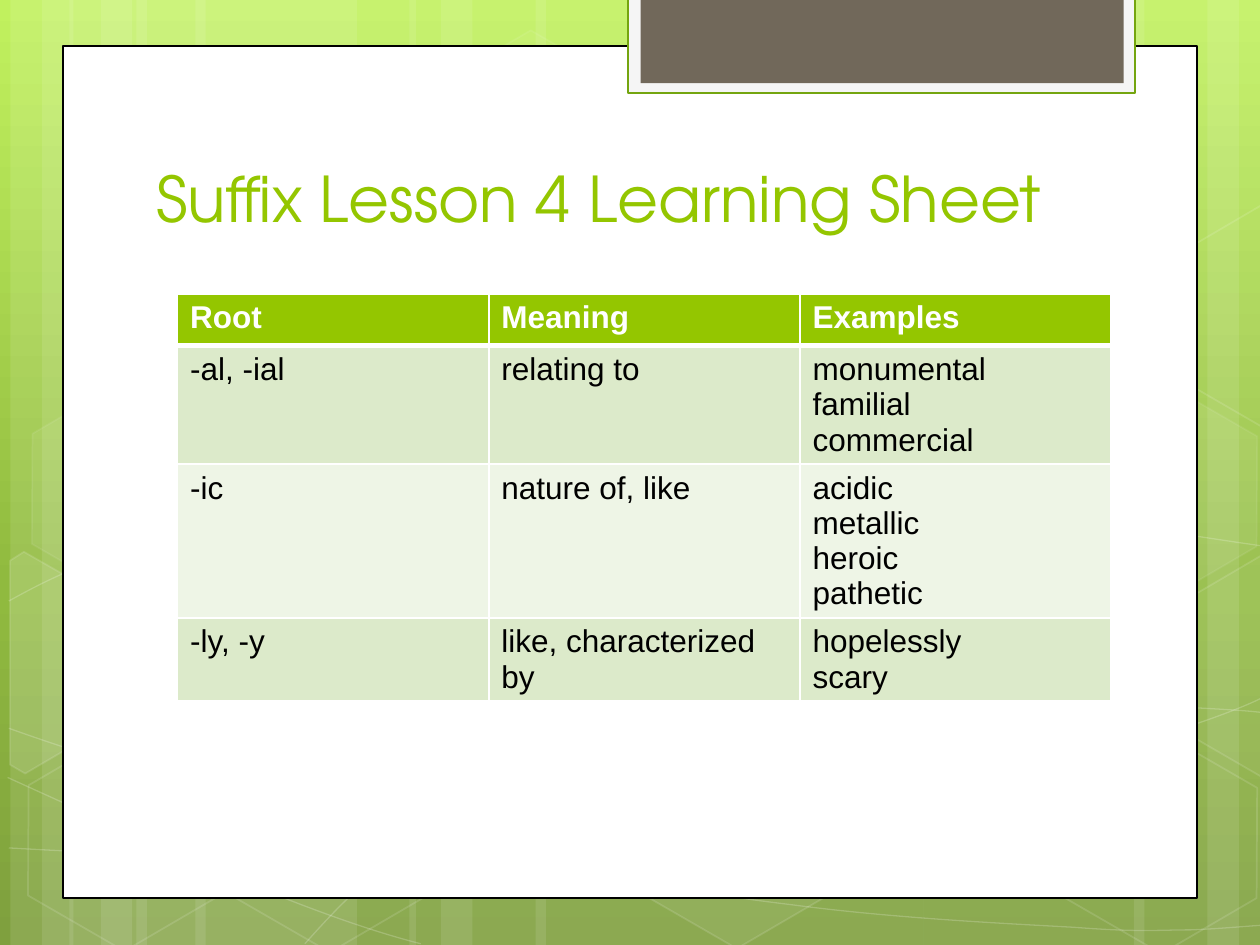
from copy import deepcopy
from dataclasses import dataclass
from typing import NamedTuple, Optional

from lxml.etree import SubElement
from pptx import Presentation
from pptx.dml.color import RGBColor as RGB
from pptx.enum.shapes import MSO_SHAPE as Shape
from pptx.enum.text import MSO_ANCHOR as Anchor, PP_ALIGN as Align
from pptx.oxml import parse_xml
from pptx.oxml.ns import nsdecls, qn
from pptx.util import Inches, Pt

COLS, ROWS = 100, 75
WIDTH, HEIGHT = Inches(10), Inches(7.5)


@dataclass(frozen=True)
class Theme:
    sky: tuple = ((0, "C1F15E"), (0.62, "90BA3F"), (1, "7FA03E"))
    white: str = "FFFFFF"
    black: str = "000000"
    accent: str = "94C600"
    tab_fill: str = "F5F5F5"
    tab_line: str = "74A50F"
    tab_core: str = "71685A"
    stripes: tuple = ("DCEACA", "EEF5E6")
    title_font: str = "TeX Gyre Adventor"
    body_font: str = "Arial"
    title_size: float = 36
    body_size: float = 18


class Box(NamedTuple):
    col: float
    row: float
    cols: float
    rows: float


class Paint(NamedTuple):
    color: str
    alpha: int = 100
    width: float = 1


class Hexagon(NamedTuple):
    col: float
    row: float
    fill: int
    line: int


class Outline(NamedTuple):
    points: list
    fill: int = 0


THEME = Theme()

BANDS = [(10.83, 17.5), (0.83, 5), (3.33, 8.33),
         (15.5, 17.5), (5.5, 5), (8, 8.33),
         (73.33, 17.5), (95.83, 5), (90, 8.33),
         (42.5, 30.83), (32.5, 5), (35, 8.33)]

CURVES = [
    [(0.7, 67.3), (6.1, 67.6), (11.5, 67.9), (19, 67.8), (26.5, 67.7), (35.8, 67.5),
     (45.8, 66.5), (55.8, 65.5), (70, 63.6), (79.2, 61.7), (88.3, 59.8), (97.7, 56.8), (100.7, 55.1)],
    [(0.7, 47.7), (3.6, 46.1), (6.5, 44.6), (12.1, 43.1), (17.8, 41.6), (25.9, 39.4),
     (34.7, 38.7), (43.6, 38), (54.4, 37.9), (65.4, 38.7), (76.4, 39.5), (94.7, 42.6), (100.7, 43.4)],
    [(0.6, 61.7), (12.7, 67.2), (24.7, 72.7), (33.4, 74.9)],
    [(0.7, 57.8), (3.8, 58.9), (7, 60), (12.8, 61.6), (18.6, 63.1), (27.3, 65.6),
     (35.7, 67.3), (44, 69), (54.5, 70.8), (62.8, 71.8), (71.1, 72.9), (80, 73.3), (85.3, 73.6),
     (90.5, 74), (91.9, 73.8), (94.5, 73.8), (97.1, 73.7), (98.9, 73.5), (100.7, 73.4)],
    [(24.2, 74.9), (26, 72.9), (27.8, 70.9), (30.2, 69.1), (32.6, 67.3), (36, 65.3),
     (38.8, 63.9), (41.6, 62.5), (43.3, 61.9), (47, 60.9), (50.6, 59.9), (57.3, 58.5), (60.8, 57.8),
     (64.4, 57.1), (64.9, 57.1), (68, 56.9), (71.1, 56.6), (76, 56.3), (79.4, 56.2),
     (82.9, 56.1), (88.6, 56.2), (88.6, 56.2), (88.6, 56.2), (95.3, 56.2), (95.3, 56.2),
     (97.1, 56.3), (98.8, 56.4), (99.7, 56.5), (100.6, 56.6), (100.3, 56.5), (100.6, 56.6)],
]

HEXAGONS = [Hexagon(33.4, 3.6, 4, 8), Hexagon(49.7, 58.9, 6, 12),
            Hexagon(1.1, 59.1, 0, 12), Hexagon(1.4, 31.2, 7, 8),
            Hexagon(17.4, 59.2, 0, 12), Hexagon(83.4, 59.3, 0, 12),
            Hexagon(83.4, 31.4, 7, 8)]

EDGE_HEXAGONS = [
    Outline([(0.8, 44.5), (1.9, 43.8), (9.6, 48.2), (9.5, 57), (2, 61.4), (0.8, 60.7)], 10),
    Outline([(92.6, 48.5), (100.1, 44.1), (100.9, 44.6), (100.9, 61.3), (100.2, 61.7), (92.6, 57.3)], 4),
    Outline([(92.6, 20.7), (100.1, 16.3), (101, 16.8), (100.9, 33.5), (100.2, 33.9), (92.6, 29.5)]),
]

LESSON = [
    ("Root", "Meaning", "Examples"),
    ("-al, -ial", "relating to", "monumental\nfamilial\ncommercial"),
    ("-ic", "nature of, like", "acidic\nmetallic\nheroic\npathetic"),
    ("-ly, -y", "like, characterized by", "hopelessly\nscary"),
]


def x(cols: float) -> int:
    return round(WIDTH * cols / COLS)


def y(rows: float) -> int:
    return round(HEIGHT * rows / ROWS)


def place(box: Box) -> tuple:
    return x(box.col), y(box.row), x(box.cols), y(box.rows)


def apply(fill, holder, paint: Optional[Paint]) -> None:
    if paint is None or not paint.alpha:
        fill.background()
        return
    fill.solid()
    fill.fore_color.rgb = RGB.from_string(paint.color)
    if paint.alpha < 100:
        color = holder.find(qn("a:solidFill")).find(qn("a:srgbClr"))
        SubElement(color, qn("a:alpha"), val=str(paint.alpha * 1000))


def style(sp, fill: Optional[Paint] = None, line: Optional[Paint] = None) -> None:
    sp.shadow.inherit = False
    props = sp.element.spPr
    apply(sp.fill, props, fill)
    if line:
        sp.line.width = Pt(line.width)
    apply(sp.line.fill, props.find(qn("a:ln")), line)


def draw_rect(s, box: Box, fill: Paint, line: Optional[Paint] = None) -> None:
    style(s.shapes.add_shape(Shape.RECTANGLE, *place(box)), fill, line)


def draw_hexagon(s, item: Hexagon) -> None:
    sp = s.shapes.add_shape(Shape.HEXAGON, *place(Box(item.col, item.row, 17.5, 15.2)))
    sp.adjustments[0] = 0.285
    sp.rotation = 30
    style(sp, Paint(THEME.white, item.fill), Paint(THEME.white, item.line))


def add_path(s, points: list, close: bool):
    start, *rest = [(x(px), y(py)) for px, py in points]
    builder = s.shapes.build_freeform(*start)
    builder.add_line_segments(rest, close=close)
    return builder.convert_to_shape()


def draw_outline(s, item: Outline) -> None:
    style(add_path(s, item.points, True), Paint(THEME.white, item.fill), Paint(THEME.white, 12))


def draw_curve(s, knots: list) -> None:
    sp = add_path(s, knots, False)
    path = next(sp.element.iter(qn("a:path")))
    segments = path.findall(qn("a:lnTo"))
    for i in range(0, len(segments), 3):
        curve = SubElement(path, qn("a:cubicBezTo"))
        for segment in segments[i:i + 3]:
            curve.append(segment.find(qn("a:pt")))
            path.remove(segment)
    style(sp, None, Paint(THEME.white, 20, 0.75))


def draw_background(s) -> None:
    fill = s.background.fill
    fill.gradient()
    fill.gradient_angle = 270
    stops = next(s.element.iter(qn("a:gsLst")))
    stops.append(deepcopy(stops[-1]))
    for stop, (position, color) in zip(fill.gradient_stops, THEME.sky):
        stop.position = position
        stop.color.rgb = RGB.from_string(color)


def format_text(tf, font: str, size: float, color: str, bold: bool = False) -> None:
    for p in tf.paragraphs:
        p.alignment = Align.LEFT
        for r in p.runs:
            r.font.name, r.font.size, r.font.bold = font, Pt(size), bold
            r.font.color.rgb = RGB.from_string(color)


def set_borders(cell, bottom: float) -> None:
    tc_pr = cell._tc.get_or_add_tcPr()
    for i, (side, width) in enumerate(zip("LRTB", (1, 1, 1, bottom))):
        tc_pr.insert(i, parse_xml(
            f'<a:ln{side} {nsdecls("a")} w="{Pt(width)}"><a:solidFill>'
            f'<a:srgbClr val="{THEME.white}"/></a:solidFill></a:ln{side}>'))


def draw_table(s, box: Box, rows: list) -> None:
    table = s.shapes.add_table(len(rows), len(rows[0]), *place(box)).table
    for i, texts in enumerate(rows):
        header = i == 0
        for j, text in enumerate(texts):
            cell = table.cell(i, j)
            cell.text = text
            cell.fill.solid()
            cell.fill.fore_color.rgb = RGB.from_string(
                THEME.accent if header else THEME.stripes[(i - 1) % 2])
            format_text(cell.text_frame, THEME.body_font, THEME.body_size,
                        THEME.white if header else THEME.black, header)
            if header:
                set_borders(cell, 3)


def draw_title(s, box: Box, text: str) -> None:
    title = s.shapes.title
    title.left, title.top, title.width, title.height = place(box)
    tf = title.text_frame
    tf.text = text
    tf.vertical_anchor = Anchor.BOTTOM
    format_text(tf, THEME.title_font, THEME.title_size, THEME.accent)
    title.element.getparent().append(title.element)


def main() -> None:
    prs = Presentation()
    prs.slide_width, prs.slide_height = WIDTH, HEIGHT
    s = prs.slides.add_slide(prs.slide_layouts[5])
    draw_background(s)
    for col, cols in BANDS:
        draw_rect(s, Box(col, 0, cols, ROWS), Paint(THEME.white, 10))
    for knots in CURVES:
        draw_curve(s, knots)
    for hexagon in HEXAGONS:
        draw_hexagon(s, hexagon)
    for outline in EDGE_HEXAGONS:
        draw_outline(s, outline)
    draw_rect(s, Box(5, 3.65, 90, 67.63), Paint(THEME.white), Paint(THEME.black, width=0.75))
    draw_rect(s, Box(49.87, -0.2, 40.2, 7.6), Paint(THEME.tab_fill), Paint(THEME.tab_line, width=1.25))
    draw_rect(s, Box(50.84, -0.2, 38.34, 6.8), Paint(THEME.tab_core))
    draw_title(s, Box(11.4, 11.25, 76.8, 7.9), "Suffix Lesson 4 Learning Sheet")
    draw_table(s, Box(14.1, 23.34, 74.1, 16.4), LESSON)
    prs.save("out.pptx")


if __name__ == "__main__":
    main()
